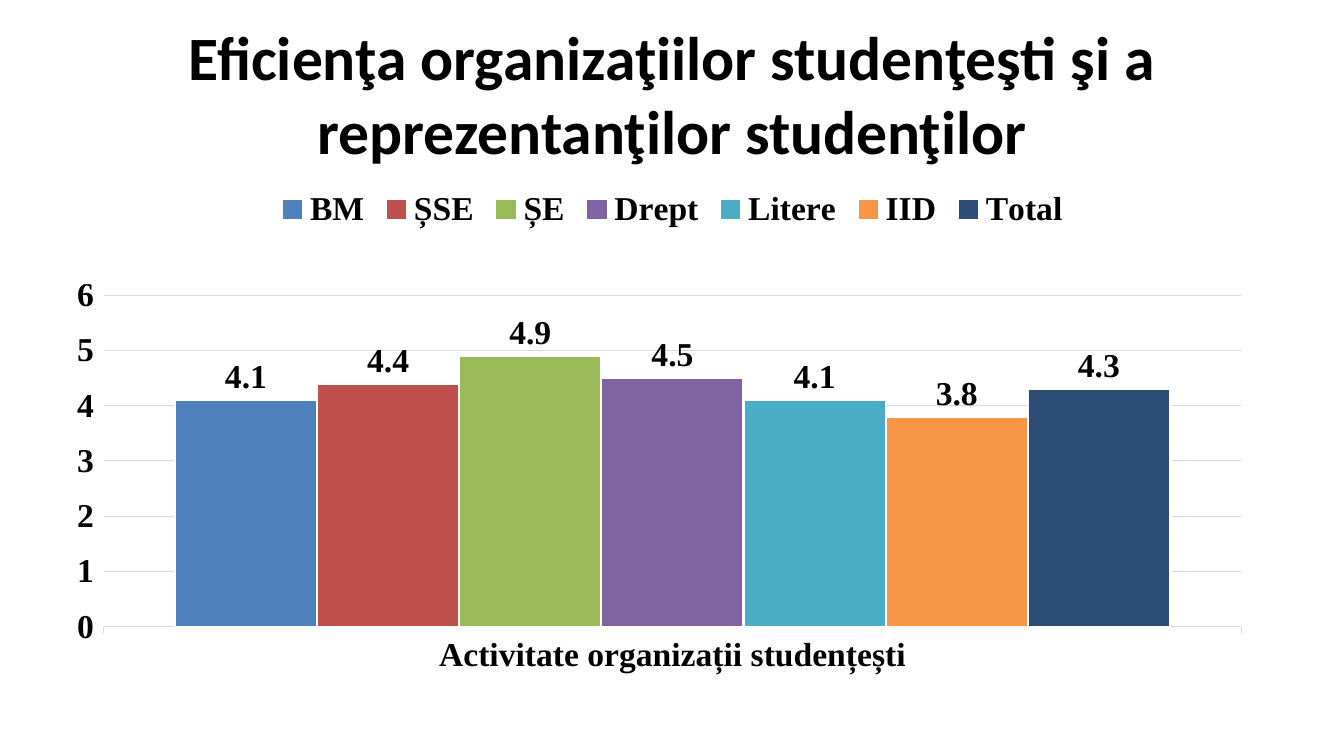
"""Build a slide with a column chart on student organisations."""
from lxml import etree
from pptx import Presentation
from pptx.chart.data import CategoryChartData
from pptx.dml.color import RGBColor
from pptx.enum.chart import XL_CHART_TYPE as CT, XL_LABEL_POSITION as LabelPos
from pptx.enum.chart import XL_LEGEND_POSITION as LegendPos, XL_TICK_MARK as Tick
from pptx.enum.text import MSO_ANCHOR as Anchor, PP_ALIGN as Align
from pptx.oxml.ns import qn
from pptx.util import Pt

PX = 9144
GREY = "D9D9D9"
TITLE = "Eficienţa organizaţiilor studenţeşti şi a reprezentanţilor studenţilor"
CATEGORY = "Activitate organizații studențești"
SCORES = [
    ("BM", 4.1, "4F81BD"),
    ("ȘSE", 4.4, "C0504D"),
    ("ȘE", 4.9, "9BBB59"),
    ("Drept", 4.5, "8064A2"),
    ("Litere", 4.1, "4BACC6"),
    ("IID", 3.8, "F79646"),
    ("Total", 4.3, "2C4D75"),
]


def rgb(value):
    return RGBColor.from_string(value)


def set_font(font, name="Times New Roman", size=24, color="000000", bold=True):
    font.name, font.size, font.bold = name, Pt(size), bold
    font.color.rgb = rgb(color)


def set_line(line, color, width):
    line.color.rgb = rgb(color)
    line.width = Pt(width)


def set_text(sp, text, box, align=Align.CENTER, anchor=Anchor.MIDDLE, **fmt):
    sp.left, sp.top, sp.width, sp.height = (v * PX for v in box)
    tf = sp.text_frame
    tf.word_wrap = True
    tf.vertical_anchor = anchor
    p = tf.paragraphs[0]
    p.alignment = align
    r = p.add_run()
    r.text = text
    set_font(r.font, **fmt)


def set_plot_layout(chart, **fractions):
    """Fix the inner plot area as fractions of the chart frame."""
    area = chart._chartSpace.chart.plotArea
    for old in area.findall(qn("c:layout")):
        area.remove(old)
    layout = etree.Element(qn("c:layout"))
    area.insert(0, layout)
    manual = etree.SubElement(layout, qn("c:manualLayout"))
    settings = {"layoutTarget": "inner", "xMode": "edge", "yMode": "edge", **fractions}
    for tag, value in settings.items():
        etree.SubElement(manual, qn(f"c:{tag}")).set("val", str(value))


def format_axes(chart):
    cat, val = chart.category_axis, chart.value_axis
    for axis in (cat, val):
        axis.major_tick_mark = Tick.OUTSIDE
        axis.minor_tick_mark = Tick.NONE
        set_font(axis.tick_labels.font)
    set_line(cat.format.line, GREY, 0.75)
    val.format.line.fill.background()
    val.minimum_scale, val.maximum_scale, val.major_unit = 0, 6, 1
    val.has_major_gridlines = True
    set_line(val.major_gridlines.format.line, GREY, 0.75)


def format_series(series, color):
    series.format.fill.solid()
    series.format.fill.fore_color.rgb = rgb(color)
    set_line(series.format.line, "FFFFFF", 1.5)
    series.invert_if_negative = False
    labels = series.data_labels
    labels.show_value = True
    labels.position = LabelPos.OUTSIDE_END
    set_font(labels.font)


def add_scores_chart(s, box):
    data = CategoryChartData()
    data.categories = [CATEGORY]
    for name, score, _ in SCORES:
        data.add_series(name, [score])
    frame = s.shapes.add_chart(CT.COLUMN_CLUSTERED, *(v * PX for v in box), data)
    chart = frame.chart
    chart.has_title = False
    set_font(chart.font)
    chart.has_legend = True
    chart.legend.position = LegendPos.TOP
    chart.legend.include_in_layout = False
    set_font(chart.legend.font)
    plot = chart.plots[0]
    plot.gap_width, plot.overlap = 100, 0
    plot.vary_by_categories = False
    for series, (_, _, color) in zip(plot.series, SCORES):
        format_series(series, color)
    format_axes(chart)
    set_plot_layout(chart, x=0.03, y=0.24, w=0.94, h=0.67)


def main():
    prs = Presentation()
    prs.slide_width, prs.slide_height = 1333 * PX, 750 * PX
    s = prs.slides.add_slide(prs.slide_layouts[5])
    set_text(s.shapes.title, TITLE, (67, 30, 1200, 125), name="Calibri", size=44)
    add_scores_chart(s, (67, 175, 1200, 495))
    prs.save("out.pptx")


if __name__ == "__main__":
    main()
